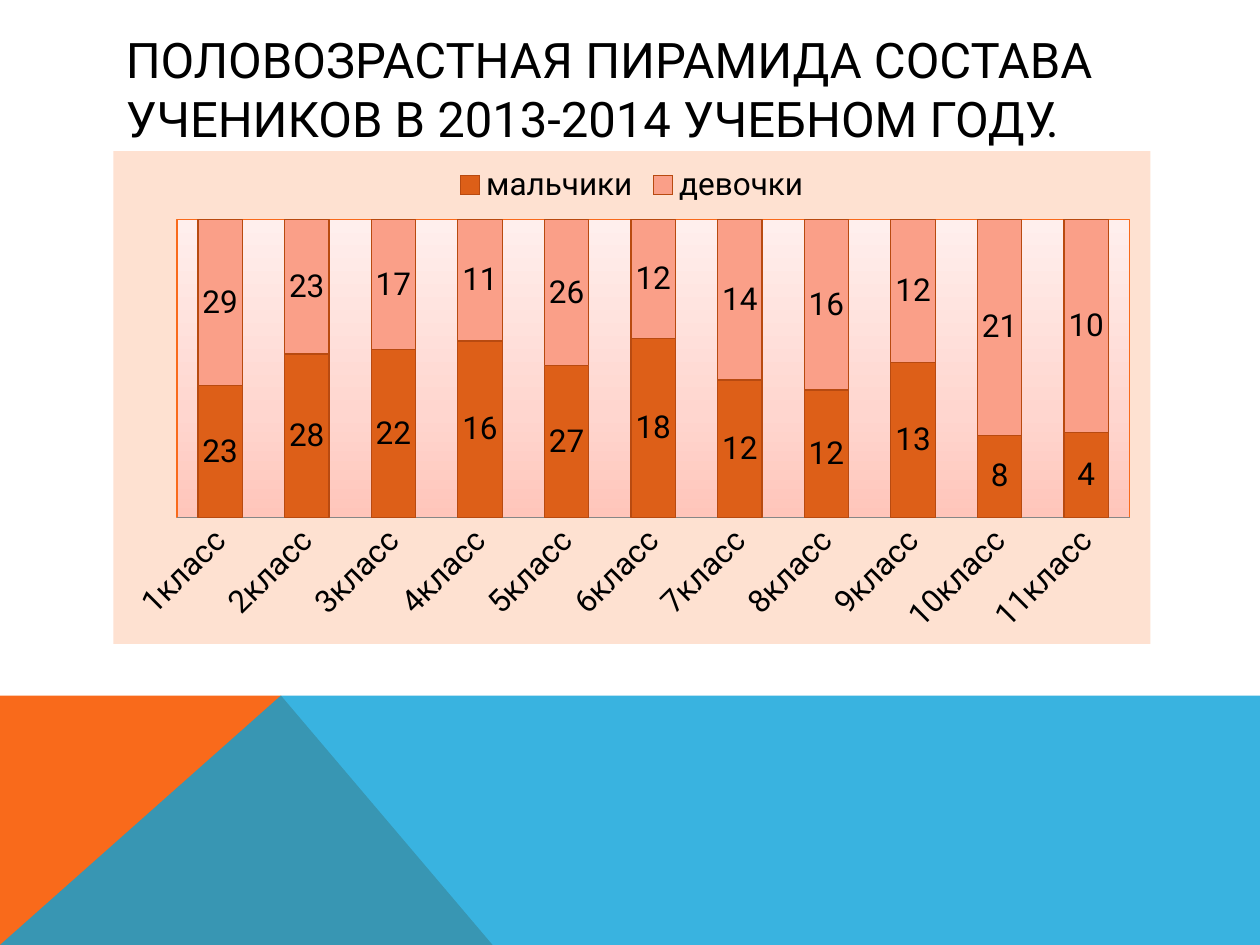
"""Build a slide with a stacked chart of boys and girls by school class."""
from lxml import etree
from pptx import Presentation
from pptx.chart.data import CategoryChartData
from pptx.dml.color import RGBColor
from pptx.enum.chart import XL_CHART_TYPE as ChartType, XL_LEGEND_POSITION as LegendPosition
from pptx.enum.chart import XL_LABEL_POSITION as LabelPosition, XL_TICK_MARK as TickMark
from pptx.enum.text import MSO_ANCHOR as Anchor
from pptx.oxml import parse_xml
from pptx.oxml.ns import nsdecls, qn
from pptx.util import Inches, Pt


def color(value):
    return RGBColor.from_string(value)


def style(font, **values):
    for name, value in values.items():
        setattr(font, name, value)
    font.color.rgb = color("000000")


deck = Presentation()
deck.slide_width, deck.slide_height = Inches(10), Inches(7.5)
width, height = deck.slide_width, deck.slide_height
page = deck.slides.add_slide(deck.slide_layouts[6])

horizon, peak = 0.736, 0.223
bands = [
    ("F96A1B", 100, [(0, 1), (0, horizon), (peak, horizon), (0.391, 1)]),
    ("08A1D9", 80, [(0, 1), (peak, horizon), (1, horizon), (1, 1)]),
]
for fill, opacity, corners in bands:
    points = [(x * width, y * height) for x, y in corners]
    builder = page.shapes.build_freeform(*points[0])
    builder.add_line_segments(points[1:], close=True)
    band = builder.convert_to_shape()
    band.shadow.inherit = False
    band.fill.solid()
    band.fill.fore_color.rgb = color(fill)
    band.line.fill.background()
    if opacity < 100:
        shade = band._element.spPr.find(".//" + qn("a:srgbClr"))
        etree.SubElement(shade, qn("a:alpha"), val=str(opacity * 1000))

left, span_width = Inches(0.9), Inches(8.23)
box = page.shapes.add_textbox(left, Inches(0.4), span_width, Inches(0.6))
box.text_frame.word_wrap = True
box.text_frame.vertical_anchor = Anchor.MIDDLE
span = box.text_frame.paragraphs[0].add_run()
span.text = "ПОЛОВОЗРАСТНАЯ ПИРАМИДА СОСТАВА УЧЕНИКОВ В 2013-2014 УЧЕБНОМ ГОДУ."
style(span.font, name="Roboto", size=Pt(28))

series_values = {
    "мальчики": ("DD5F18", [23, 28, 22, 16, 27, 18, 12, 12, 13, 8, 4]),
    "девочки": ("FA9F88", [29, 23, 17, 11, 26, 12, 14, 16, 12, 21, 10]),
}
data = CategoryChartData()
data.categories = [f"{grade}класс" for grade in range(1, 12)]
for name, (fill, values) in series_values.items():
    data.add_series(name, values)
chart = page.shapes.add_chart(
    ChartType.COLUMN_STACKED_100, left, Inches(1.2), span_width, Inches(3.91), data
).chart
text_format = {"name": "Roboto", "size": Pt(18)}
style(chart.font, **text_format)
chart.has_title = False
chart.has_legend = True
chart.legend.position = LegendPosition.TOP
chart.legend.include_in_layout = False
style(chart.legend.font, **text_format)

plot = chart.plots[0]
plot.gap_width, plot.overlap, plot.vary_by_categories = 95, 100, False
for series in plot.series:
    series.format.fill.solid()
    series.format.fill.fore_color.rgb = color(series_values[series.name][0])
    series.format.line.color.rgb = color("B84A10")
    series.format.line.width = Pt(0.75)
    labels = series.data_labels
    labels.show_value = True
    labels.position = LabelPosition.CENTER
    style(labels.font, **text_format)

chart.value_axis.visible = False
chart.value_axis.has_major_gridlines = False
axis = chart.category_axis
axis.major_tick_mark = axis.minor_tick_mark = TickMark.NONE
axis.format.line.color.rgb = color("868686")
style(axis.tick_labels.font, **text_format)
axis._element.find(qn("c:txPr")).find(qn("a:bodyPr")).set("rot", "-2700000")

space = chart._chartSpace
space.find(qn("c:chart")).addnext(parse_xml(
    f'<c:spPr {nsdecls("c", "a")}><a:solidFill><a:srgbClr val="FEE1D1"/></a:solidFill>'
    "<a:ln><a:noFill/></a:ln></c:spPr>"
))
gradient = {0: "FFC5BA", 35: "FFD6CF", 100: "FFEFED"}
stops = "".join(
    f'<a:gs pos="{place * 1000}"><a:srgbClr val="{tone}"/></a:gs>'
    for place, tone in gradient.items()
)
space.find(".//" + qn("c:plotArea")).append(parse_xml(
    f'<c:spPr {nsdecls("c", "a")}><a:gradFill><a:gsLst>{stops}</a:gsLst>'
    '<a:lin ang="16200000" scaled="1"/></a:gradFill><a:ln w="12700"><a:solidFill>'
    '<a:srgbClr val="F96A1B"/></a:solidFill></a:ln></c:spPr>'
))

deck.save("out.pptx")
